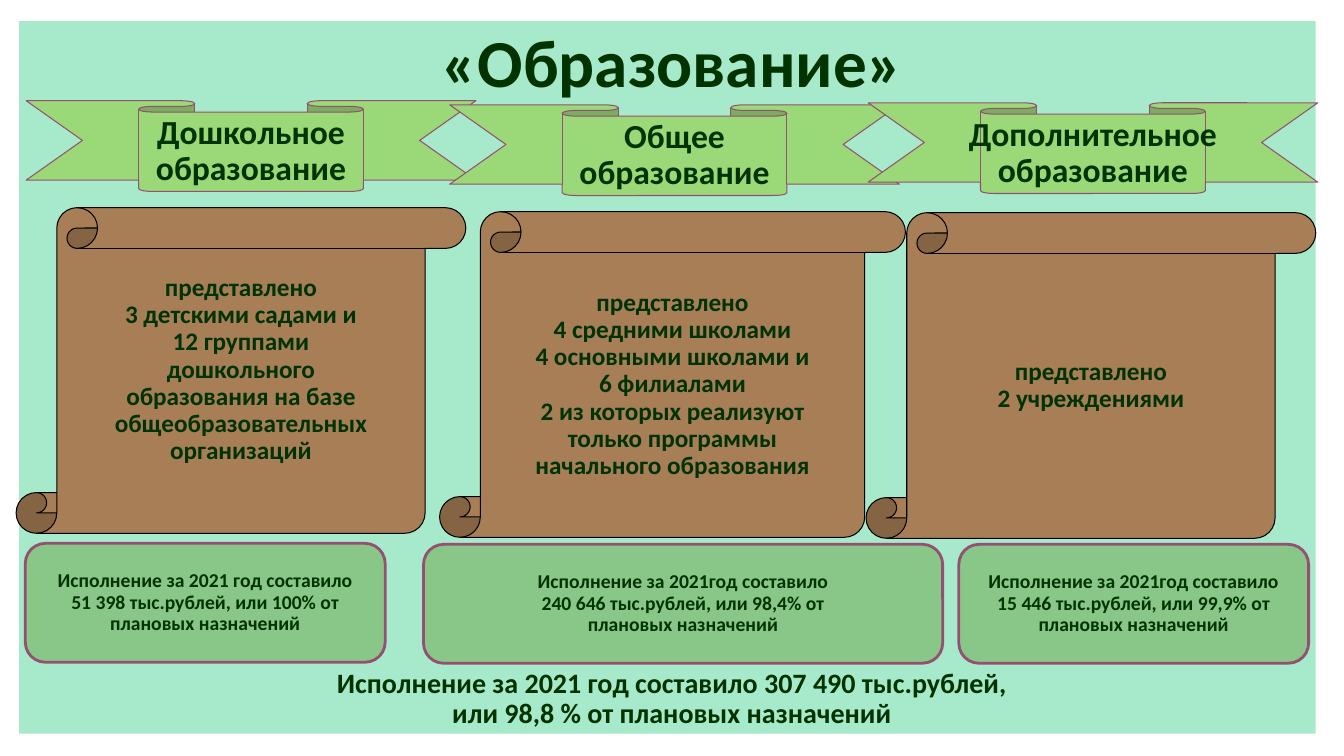
from dataclasses import dataclass

from lxml.etree import SubElement
from pptx import Presentation
from pptx.dml.color import RGBColor
from pptx.enum.shapes import MSO_SHAPE
from pptx.enum.text import MSO_ANCHOR, PP_ALIGN
from pptx.oxml.ns import qn
from pptx.shapes.autoshape import Shape
from pptx.slide import Slide
from pptx.util import Emu, Inches, Pt

WIDE, TALL = Inches(13.33), Inches(7.5)
INK, MINT, PLUM, BLACK = "003300", "A7EACB", "954F72", "000000"


@dataclass(frozen=True)
class Box:
    """A frame in percent of the slide's width and height."""
    left: float
    top: float
    width: float
    height: float

    def frame(self) -> tuple[Emu, Emu, Emu, Emu]:
        """Return the frame as lengths."""
        return (Emu(int(WIDE * self.left / 100)), Emu(int(TALL * self.top / 100)),
                Emu(int(WIDE * self.width / 100)), Emu(int(TALL * self.height / 100)))


@dataclass(frozen=True)
class Style:
    """The look that one row of shapes shares."""
    kind: MSO_SHAPE
    bends: tuple[float, ...]
    fill: str
    edge: str
    weight: float
    size: int
    height: float
    alpha: int = 100


@dataclass(frozen=True)
class Item:
    """One shape of a row, with its lines of text."""
    left: float
    top: float
    width: float
    lines: tuple[str, ...]
    base: float = 0.05


CARD = Style(MSO_SHAPE.ROUNDED_RECTANGLE, (0.17,), "85C27F", PLUM, 2, 14, 15.73, 87)
RIBBON = Style(MSO_SHAPE.DOWN_RIBBON, (0.125, 0.5), "9BD878", PLUM, 0.75, 24, 12)
SCROLL = Style(MSO_SHAPE.VERTICAL_SCROLL, (0.125,), "A77E56", BLACK, 0.75, 18, 43.07)

ROWS: tuple[tuple[Style, tuple[Item, ...]], ...] = (
    (CARD, (
        Item(1.88, 71.87, 26.78, ("Исполнение за 2021 год составило",
                                  "51 398 тыс.рублей, или 100% от", "плановых назначений")),
        Item(31.51, 72, 38.63, ("Исполнение за 2021год составило",
                                "240 646 тыс.рублей, или 98,4% от", "плановых назначений")),
        Item(71.34, 72, 26.03, ("Исполнение за 2021год составило",
                                "15 446 тыс.рублей, или 99,9% от", "плановых назначений")),
    )),
    (RIBBON, (
        Item(1.95, 13.33, 33.46, ("Дошкольное", "образование")),
        Item(33.46, 13.87, 33.46, ("Общее", "образование")),
        Item(64.59, 13.6, 33.46, ("Дополнительное", "образование")),
    )),
    (SCROLL, (
        Item(1.2, 27.47, 33.46, ("представлено", "3 детскими садами и", "12 группами",
                                 "дошкольного", "образования на базе",
                                 "общеобразовательных", "организаций"), 0.26),
        Item(32.71, 28, 34.66, ("представлено", "4 средними школами",
                                "4 основными школами и", "6 филиалами",
                                "2 из которых реализуют", "только программы",
                                "начального образования")),
        Item(64.44, 28.13, 33.46, ("представлено", "2 учреждениями")),
    )),
)


def tint(code: str) -> RGBColor:
    """Turn a hex string into a colour."""
    return RGBColor.from_string(code)


def write(shape: Shape, lines: tuple[str, ...], size: int,
          anchor: MSO_ANCHOR = MSO_ANCHOR.MIDDLE, base: float = 0.05) -> None:
    """Fill a shape with centred bold lines."""
    text = shape.text_frame
    text.word_wrap = False
    text.vertical_anchor = anchor
    text.margin_left = text.margin_right = Inches(0.1)
    text.margin_top, text.margin_bottom = Inches(0.05), Inches(base)
    for step, line in enumerate(lines):
        para = text.add_paragraph() if step else text.paragraphs[0]
        para.alignment = PP_ALIGN.CENTER
        para.line_spacing = 0.9
        para.space_before = Pt(0)
        run = para.add_run()
        run.text = line
        run.font.name, run.font.size, run.font.bold = "Calibri", Pt(size), True
        run.font.color.rgb = tint(INK)


def form(slide: Slide, kind: MSO_SHAPE, box: Box, fill: str) -> Shape:
    """Add a plain filled shape without a shadow."""
    shape = slide.shapes.add_shape(kind, *box.frame())
    shape.shadow.inherit = False
    shape.fill.solid()
    shape.fill.fore_color.rgb = tint(fill)
    return shape


def draw(slide: Slide, style: Style, item: Item) -> None:
    """Draw one item in the style of its row."""
    box = Box(item.left, item.top, item.width, style.height)
    shape = form(slide, style.kind, box, style.fill)
    for spot, bend in enumerate(style.bends):
        shape.adjustments[spot] = bend
    shape.line.color.rgb = tint(style.edge)
    shape.line.width = Pt(style.weight)
    if style.alpha < 100:
        paint = shape.element.spPr.find(qn("a:solidFill")).find(qn("a:srgbClr"))
        SubElement(paint, qn("a:alpha")).set("val", str(style.alpha * 1000))
    write(shape, item.lines, style.size, base=item.base)


def main() -> None:
    """Build the slide and save it."""
    deck = Presentation()
    deck.slide_width, deck.slide_height = WIDE, TALL
    slide = deck.slides.add_slide(deck.slide_layouts[5])

    title = slide.shapes.title
    title.left, title.top, title.width, title.height = Box(5.33, 3.2, 89.42, 12).frame()
    write(title, ("«Образование»",), 48, MSO_ANCHOR.TOP)

    back = form(slide, MSO_SHAPE.RECTANGLE, Box(1.43, 2.8, 96.47, 94.27), MINT)
    back.line.fill.background()
    title.element.addprevious(back.element)

    total = slide.shapes.add_textbox(*Box(0, 87.87, 100, 8.4).frame())
    write(total, ("Исполнение за 2021 год составило 307 490 тыс.рублей,",
                  "или 98,8 % от плановых назначений"), 20, MSO_ANCHOR.TOP)

    for style, items in ROWS:
        for item in items:
            draw(slide, style, item)
    deck.save("out.pptx")


if __name__ == "__main__":
    main()
